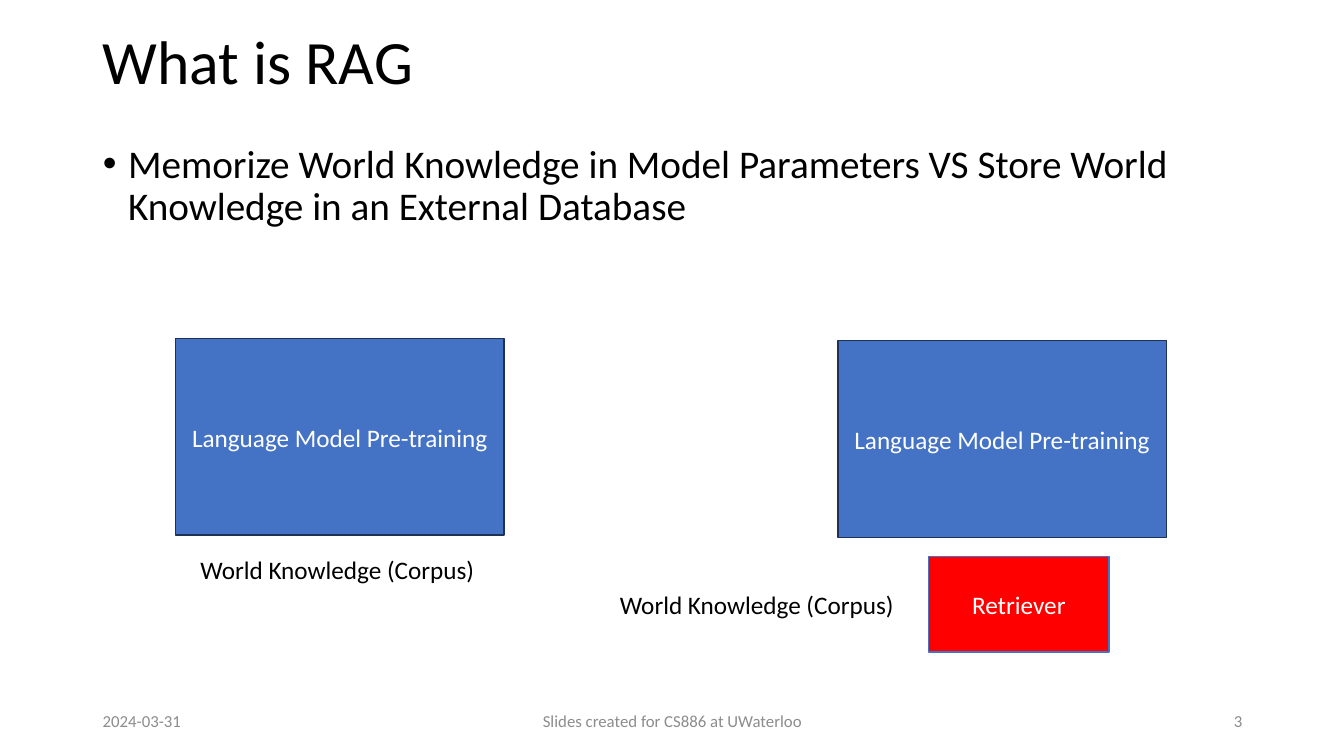
from lxml import etree
from pptx import Presentation
from pptx import util as u
from pptx.dml.color import RGBColor
from pptx.enum import shapes, text
from pptx.oxml.ns import qn

PX = 9144
BLACK = RGBColor(0, 0, 0)
WHITE = RGBColor(255, 255, 255)
GREY = RGBColor(0x8C, 0x8C, 0x8C)
BLUE = RGBColor(0x44, 0x72, 0xC4)
NAVY = RGBColor(0x1E, 0x32, 0x56)
RED = RGBColor(255, 0, 0)
LEFT, CENTER, RIGHT = text.PP_ALIGN.LEFT, text.PP_ALIGN.CENTER, text.PP_ALIGN.RIGHT
TOP, MIDDLE = text.MSO_ANCHOR.TOP, text.MSO_ANCHOR.MIDDLE


def emu(*lengths):
    """Turn px lengths into EMU."""
    return [u.Emu(length * PX) for length in lengths]


def apply(target, values):
    """Set every attribute named in a dict of format values."""
    for name, value in values.items():
        setattr(target, name, value)


def write(shape, words, size, color, align=LEFT, anchor=TOP, spacing=1.0):
    """Put one formatted paragraph into a shape."""
    frame = shape.text_frame
    apply(frame, {"word_wrap": True, "auto_size": text.MSO_AUTO_SIZE.NONE,
                  "vertical_anchor": anchor})
    para = frame.paragraphs[0]
    apply(para, {"alignment": align, "line_spacing": spacing, "space_before": u.Pt(0)})
    span = para.add_run()
    span.text = words
    apply(span.font, {"name": "Calibri", "size": u.Pt(size)})
    span.font.color.rgb = color
    return para


def add_label(page, box, words, size, color, **layout):
    """Add a text box."""
    write(page.shapes.add_textbox(*emu(*box)), words, size, color, **layout)


def add_block(page, box, words, fill, line):
    """Add a filled rectangle with a centred caption."""
    block = page.shapes.add_shape(shapes.MSO_SHAPE.RECTANGLE, *emu(*box))
    block.shadow.inherit = False
    block.fill.solid()
    block.fill.fore_color.rgb = fill
    block.line.color.rgb = line
    block.line.width = u.Pt(1)
    write(block, words, 18, WHITE, align=CENTER, anchor=MIDDLE)


def place(holder, box):
    """Move a placeholder to a box."""
    apply(holder, dict(zip(("left", "top", "width", "height"), emu(*box))))


def add_heading(page, box):
    """Fill the title and the bulleted body."""
    left, top, width, height = box
    title, body = page.placeholders
    place(title, (left, top, width, 99))
    write(title, "What is RAG", 44, BLACK, anchor=MIDDLE, spacing=0.9)
    place(body, (left, top + 123, width, height - 123))
    para = write(body, "Memorize World Knowledge in Model Parameters VS "
                 "Store World Knowledge in an External Database", 28, BLACK, spacing=0.9)
    props = para._p.get_or_add_pPr()
    props.set("marL", str(25 * PX))
    props.set("indent", str(-25 * PX))
    etree.SubElement(props, qn("a:buFont"), typeface="Arial")
    etree.SubElement(props, qn("a:buChar"), char="•")


def add_model(page, box):
    """Draw the language model block."""
    add_block(page, box, "Language Model Pre-training", BLUE, NAVY)


def add_corpus(page, left, top):
    """Draw the corpus label."""
    add_label(page, (left, top, 297, 40), "World Knowledge (Corpus)", 18, BLACK)


def add_memorizing(page, box):
    """Draw the model that memorizes its corpus."""
    left, top, width, height = box
    add_model(page, (left, top, width, 195))
    add_corpus(page, left + 15, top + 209)


def add_retrieving(page, box):
    """Draw the model that retrieves from an external corpus."""
    left, top, width, height = box
    add_model(page, (left + width - 326, top, 326, 195))
    add_corpus(page, left, top + 242)
    add_block(page, (left + 316, top + 214, 179, 95), "Retriever", RED, BLUE)


def add_footer(page, box):
    """Write date, credit and page number along the bottom."""
    left, top, width, height = box
    for words, offset, span_width, align in (
            ("2024-03-31", 0, 300, LEFT),
            ("Slides created for CS886 at UWaterloo", (width - 450) // 2, 450, CENTER),
            ("3", width - 300, 300, RIGHT)):
        add_label(page, (left + offset, top, span_width, height), words, 12, GREY,
                  align=align, anchor=MIDDLE)


def main():
    """Build the deck."""
    deck = Presentation()
    deck.slide_width, deck.slide_height = emu(1333, 750)
    page = deck.slides.add_slide(deck.slide_layouts[1])
    add_heading(page, (92, 15, 1150, 661))
    add_footer(page, (92, 695, 1150, 40))
    add_memorizing(page, (174, 336, 326, 249))
    add_retrieving(page, (605, 338, 552, 309))
    deck.save("out.pptx")


if __name__ == "__main__":
    main()
